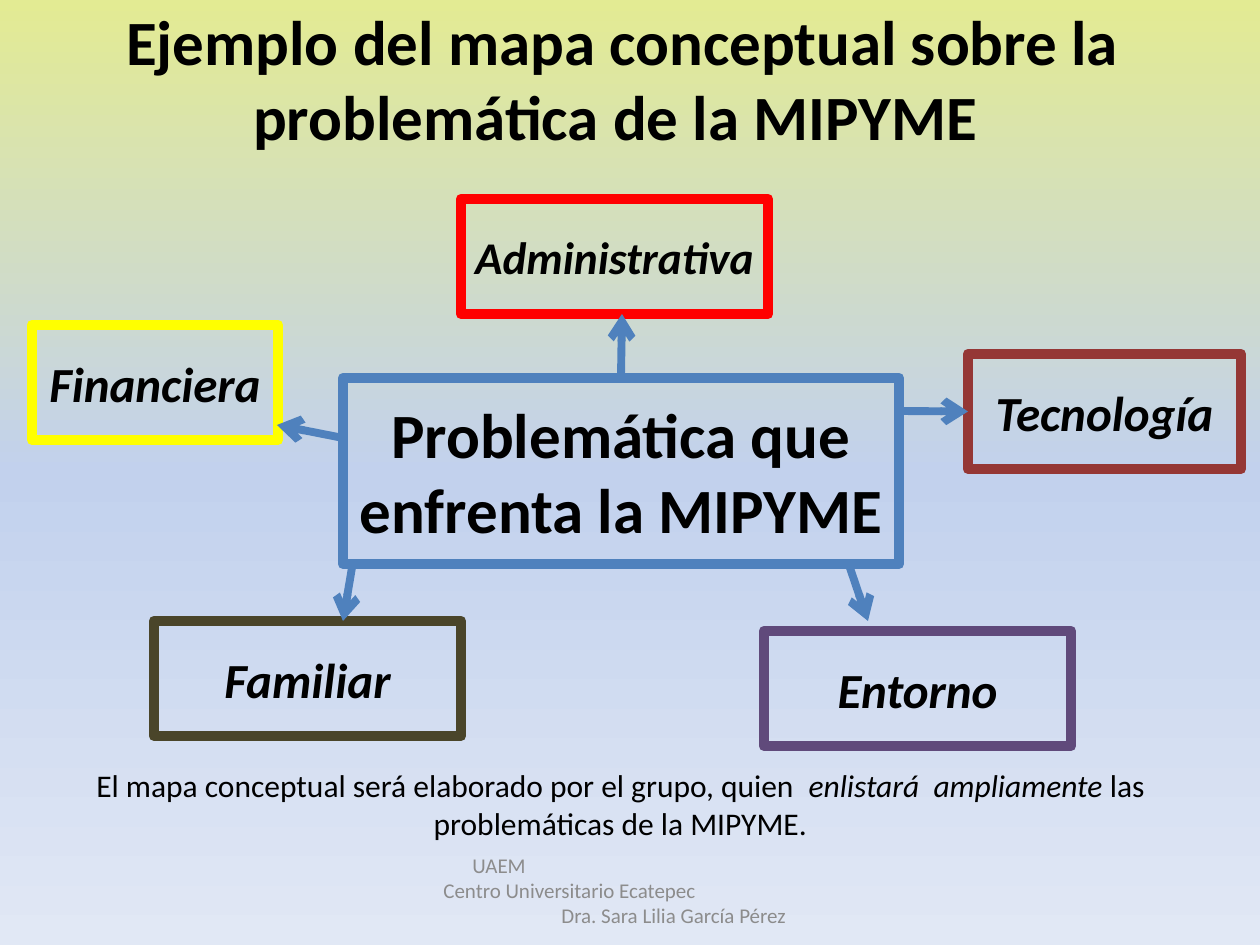
from copy import deepcopy

from lxml.etree import SubElement
from pptx import Presentation
from pptx.dml.color import RGBColor
from pptx.enum.shapes import MSO_CONNECTOR as CONNECTOR, MSO_SHAPE as SHAPE
from pptx.enum.text import MSO_ANCHOR as ANCHOR, PP_ALIGN as ALIGN
from pptx.oxml.ns import qn
from pptx.util import Pt

PX = 914400 // 126
TOP, LEFT = 0, 1
FONT = "Calibri"
COLORS = {
    "black": "000000", "gray": "8C8C8C", "blue": "4F81BD", "yellow": "FFFF00",
    "red": "FF0000", "olive": "4A452A", "purple": "604A7B", "maroon": "953735",
    "sky_top": "E3EB93", "sky_middle": "C2D1ED", "sky_bottom": "E1E8F5",
}
TOPICS = [
    ("Financiera", (32, 325, 246, 115), "yellow", 28),
    ("Administrativa", (461, 199, 307, 115), "red", 25.9),
    ("Familiar", (154, 621, 307, 115), "olive", 28),
    ("Entorno", (764, 631, 307, 115), "purple", 28),
    ("Tecnología", (968, 354, 273, 115), "maroon", 28),
]
ARROWS = [
    ("Financiera", (343, 438, 277, 425)),
    ("Administrativa", (620, 378, 622, 314)),
    ("Familiar", (353, 562, 343, 621)),
    ("Entorno", (848, 562, 868, 621)),
    ("Tecnología", (898, 411, 968, 411)),
]
INSTITUTION = [("UAEM", 29), ("Centro Universitario Ecatepec", 0),
               ("Dra. Sara Lilia García Pérez", 118)]


def emu(*lengths):
    """Turn px lengths into EMU."""
    return [length * PX for length in lengths]


def rgb(name):
    """Look up a named colour."""
    return RGBColor.from_string(COLORS[name])


def write(paragraph, text, size, color="black", bold=False, italic=False,
          align=ALIGN.CENTER, indent=0):
    """Add a formatted run to a paragraph."""
    paragraph.alignment = align
    if indent:
        paragraph._p.get_or_add_pPr().set("marL", str(indent * PX))
    run = paragraph.add_run()
    run.text = text
    font = run.font
    font.name, font.size, font.bold, font.italic = FONT, Pt(size), bold, italic
    font.color.rgb = rgb(color)


def paint_background(slide):
    """Give the slide its vertical three-colour gradient."""
    fill = slide.background.fill
    fill.gradient()
    fill.gradient_angle = 270
    first = next(slide.element.iter(qn("a:gs")))
    first.addnext(deepcopy(first))
    shades = [(0, "sky_top"), (0.5, "sky_middle"), (1, "sky_bottom")]
    for stop, (position, shade) in zip(fill.gradient_stops, shades):
        stop.position = position
        stop.color.rgb = rgb(shade)


def outline(box, color):
    """Leave a box unfilled with a thick border and middle text."""
    box.fill.background()
    box.line.color.rgb = rgb(color)
    box.line.width = Pt(6)
    box.text_frame.word_wrap = True
    box.text_frame.vertical_anchor = ANCHOR.MIDDLE


def place_center(slide):
    """Turn the title into the central concept."""
    center = slide.shapes.title
    center.left, center.top, center.width, center.height = emu(343, 378, 556, 186)
    outline(center, "blue")
    write(center.text_frame.paragraphs[0], "Problemática que enfrenta la MIPYME",
          36, bold=True)
    return center


def add_topic(slide, label, bounds, color, size):
    """Add one outlined topic box."""
    topic = slide.shapes.add_shape(SHAPE.RECTANGLE, *emu(*bounds))
    topic.shadow.inherit = False
    outline(topic, color)
    write(topic.text_frame.paragraphs[0], label, size, bold=True, italic=True)
    return topic


def add_arrow(slide, ends):
    """Add an arrow that leads from the center to a topic."""
    arrow = slide.shapes.add_connector(CONNECTOR.STRAIGHT, *emu(*ends))
    arrow.line.color.rgb = rgb("blue")
    arrow.line.width = Pt(4.5)
    SubElement(arrow.line._get_or_add_ln(), qn("a:tailEnd"), type="arrow")
    SubElement(arrow._element.spPr, qn("a:effectLst"))
    return arrow


def add_text_frame(slide, bounds, anchor=ANCHOR.TOP):
    """Add a wrapping text box and return its frame."""
    frame = slide.shapes.add_textbox(*emu(*bounds)).text_frame
    frame.word_wrap = True
    frame.vertical_anchor = anchor
    return frame


def add_institution(slide):
    """Add the stepped credit lines at the foot."""
    frame = add_text_frame(slide, (431, 865, 399, 50), ANCHOR.MIDDLE)
    for index, (line, indent) in enumerate(INSTITUTION):
        paragraph = frame.add_paragraph() if index else frame.paragraphs[0]
        write(paragraph, line, 12, color="gray", align=ALIGN.LEFT, indent=indent)


def main():
    """Build the concept map slide."""
    deck = Presentation()
    deck.slide_width, deck.slide_height = emu(1260, 945)
    slide = deck.slides.add_slide(deck.slide_layouts[5])
    paint_background(slide)
    center = place_center(slide)
    add_institution(slide)
    topics = {topic[0]: add_topic(slide, *topic) for topic in TOPICS}

    heading = add_text_frame(slide, (0, -4, 1245, 165)).paragraphs[0]
    write(heading, "Ejemplo del mapa conceptual sobre la problemática de la MIPYME ",
          36, bold=True)

    arrows = {label: add_arrow(slide, ends) for label, ends in ARROWS}
    arrows["Administrativa"].begin_connect(center, TOP)
    arrows["Tecnología"].end_connect(topics["Tecnología"], LEFT)

    note = add_text_frame(slide, (0, 760, 1241, 89)).paragraphs[0]
    write(note, "El mapa conceptual será elaborado por el grupo, quien  ", 18)
    write(note, "enlistará  ampliamente ", 18, italic=True)
    write(note, "las problemáticas de la MIPYME.", 18)
    deck.save("out.pptx")


if __name__ == "__main__":
    main()
